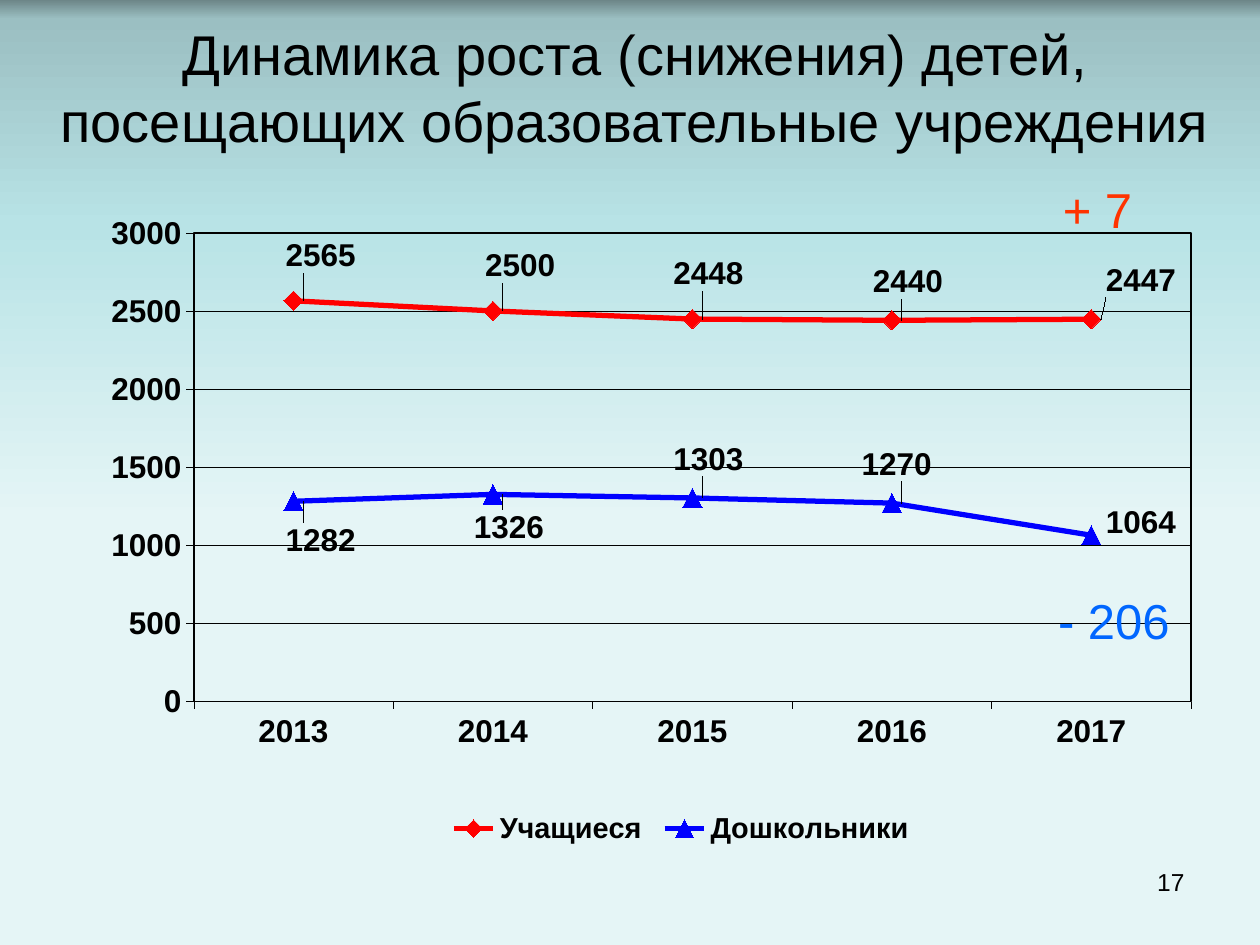
from lxml import etree
from pptx import Presentation
from pptx.chart.data import CategoryChartData
from pptx.dml.color import RGBColor
from pptx.enum.chart import (XL_CHART_TYPE, XL_LABEL_POSITION, XL_LEGEND_POSITION,
                             XL_MARKER_STYLE, XL_TICK_MARK)
from pptx.enum.text import MSO_ANCHOR, MSO_AUTO_SIZE, PP_ALIGN
from pptx.oxml import parse_xml
from pptx.oxml.ns import nsdecls, qn
from pptx.util import Inches, Pt

LINE_MARKERS = XL_CHART_TYPE.LINE_MARKERS
RIGHT_OF_POINT = XL_LABEL_POSITION.RIGHT
BOTTOM = XL_LEGEND_POSITION.BOTTOM
DIAMOND, TRIANGLE = XL_MARKER_STYLE.DIAMOND, XL_MARKER_STYLE.TRIANGLE
OUTSIDE = XL_TICK_MARK.OUTSIDE
MIDDLE, TOP = MSO_ANCHOR.MIDDLE, MSO_ANCHOR.TOP
CENTER, RIGHT = PP_ALIGN.CENTER, PP_ALIGN.RIGHT
NO_FIT = MSO_AUTO_SIZE.NONE

WIDTH, HEIGHT = Inches(10), Inches(7.5)
FONT = "Arial"
COLORS = {"ink": "000000", "pupils": "FF0000", "preschool": "0000FF",
          "growth": "FF3300", "decline": "0066FF"}
SKY = [(0, "6D8688"), (2, "9BBFC2"), (24, "B8E3E6"), (55, "E5F5F6"), (100, "E5F5F6")]
YEARS = ["2013", "2014", "2015", "2016", "2017"]
SERIES = [
    ("Учащиеся", "pupils", DIAMOND, [2565, 2500, 2448, 2440, 2447],
     [(-0.02, -0.07), (-0.02, -0.07), (-0.03, -0.07), (-0.03, -0.06), (0, -0.06)]),
    ("Дошкольники", "preschool", TRIANGLE, [1282, 1326, 1303, 1270, 1064],
     [(-0.02, 0.06), (-0.03, 0.05), (-0.03, -0.06), (-0.04, -0.06), (0, -0.02)]),
]


def rgb(name):
    return RGBColor.from_string(COLORS[name])


def share(left, top, width, height):
    return (int(WIDTH * left), int(HEIGHT * top), int(WIDTH * width), int(HEIGHT * height))


def style_font(font, size, color="ink", bold=False):
    font.name, font.size, font.bold = FONT, Pt(size), bold
    font.color.rgb = rgb(color)


def style_line(line, color, width):
    line.color.rgb = rgb(color)
    line.width = Pt(width)


def paint_background(slide):
    fill = slide.background.fill
    fill.gradient()
    fill.gradient_angle = 270
    stops = slide.background._cSld.find(".//" + qn("a:gsLst"))
    for stop in list(stops):
        stops.remove(stop)
    for position, color in SKY:
        stop = etree.SubElement(stops, qn("a:gs"), pos=str(position * 1000))
        etree.SubElement(stop, qn("a:srgbClr"), val=color)


def write(frame, text, size, color, align, anchor, wrap):
    frame.text = text
    frame.auto_size = NO_FIT
    frame.word_wrap = wrap
    frame.vertical_anchor = anchor
    paragraph = frame.paragraphs[0]
    paragraph.alignment = align
    style_font(paragraph.font, size, color)


def place_title(slide, box, text):
    title = slide.shapes.title
    title.left, title.top, title.width, title.height = box
    write(title.text_frame, text, 32, "ink", CENTER, MIDDLE, True)


def place_note(slide, box, text, size, color, align=CENTER, anchor=MIDDLE, wrap=False):
    note = slide.shapes.add_textbox(*box)
    write(note.text_frame, text, size, color, align, anchor, wrap)


def manual_layout(x, y, size=None, inner=False, edge=True):
    parts = '<c:layoutTarget val="inner"/>' if inner else ""
    if edge:
        parts += '<c:xMode val="edge"/><c:yMode val="edge"/>'
    parts += f'<c:x val="{x}"/><c:y val="{y}"/>'
    if size:
        parts += f'<c:w val="{size[0]}"/><c:h val="{size[1]}"/>'
    return parse_xml(f'<c:layout {nsdecls("c")}><c:manualLayout>{parts}'
                     '</c:manualLayout></c:layout>')


def set_layout(parent, index, layout):
    for old in parent.findall(qn("c:layout")):
        parent.remove(old)
    parent.insert(index, layout)


def style_axis(axis):
    axis.major_tick_mark = OUTSIDE
    style_font(axis.tick_labels.font, 18, bold=True)
    style_line(axis.format.line, "ink", 0.25)


def style_series(series, color, marker, offsets):
    series.smooth = False
    style_line(series.format.line, color, 3)
    series.marker.style, series.marker.size = marker, 11
    series.marker.format.fill.solid()
    series.marker.format.fill.fore_color.rgb = rgb(color)
    series.marker.format.line.color.rgb = rgb(color)
    for index, (dx, dy) in enumerate(offsets):
        label = series.points[index].data_label
        label.position = RIGHT_OF_POINT
        style_font(label.font, 18, bold=True)
    labels = series.data_labels
    labels.show_value = True
    style_font(labels.font, 18, bold=True)
    for label, (dx, dy) in zip(labels._element.findall(qn("c:dLbl")), offsets):
        set_layout(label, 1, manual_layout(dx, dy, edge=False))


def place_chart(slide, box):
    data = CategoryChartData()
    data.categories = YEARS
    for name, _, _, values, _ in SERIES:
        data.add_series(name, values)
    chart = slide.shapes.add_chart(LINE_MARKERS, *box, data).chart
    chart.has_title = False
    style_font(chart.font, 18, bold=True)

    for axis in (chart.category_axis, chart.value_axis):
        style_axis(axis)
    values_axis = chart.value_axis
    values_axis.minimum_scale, values_axis.maximum_scale = 0, 3000
    values_axis.major_unit = 500
    style_line(values_axis.major_gridlines.format.line, "ink", 0.25)

    chart.plots[0].vary_by_categories = False
    for series, (_, color, marker, _, offsets) in zip(chart.plots[0].series, SERIES):
        style_series(series, color, marker, offsets)

    chart.has_legend = True
    legend = chart.legend
    legend.position, legend.include_in_layout = BOTTOM, False
    style_font(legend.font, 16.5, bold=True)
    set_layout(legend._element, 1, manual_layout(0.33, 0.93, (0.43, 0.07)))

    plot_area = chart._chartSpace.chart.plotArea
    set_layout(plot_area, 0, manual_layout(0.11, 0.05, (0.89, 0.72), inner=True))
    plot_area.append(parse_xml(
        f'<c:spPr {nsdecls("c", "a")}><a:noFill/><a:ln w="{Pt(1)}"><a:solidFill>'
        f'<a:srgbClr val="{COLORS["ink"]}"/></a:solidFill></a:ln></c:spPr>'))


def main():
    deck = Presentation()
    deck.slide_width, deck.slide_height = WIDTH, HEIGHT
    slide = deck.slides.add_slide(deck.slide_layouts[5])
    paint_background(slide)
    place_note(slide, share(0.717, 0.911, 0.233, 0.069), "17", 14, "ink", RIGHT, TOP, True)
    place_title(slide, share(0.033, 0.04, 0.942, 0.104),
                "Динамика роста (снижения) детей, посещающих образовательные учреждения")
    place_chart(slide, share(0.056, 0.212, 0.89, 0.689))
    place_note(slide, share(0.842, 0.611, 0.084, 0.089), "- 206", 28, "decline")
    place_note(slide, share(0.825, 0.177, 0.092, 0.089), "+ 7", 28, "growth")
    deck.save("out.pptx")


if __name__ == "__main__":
    main()
